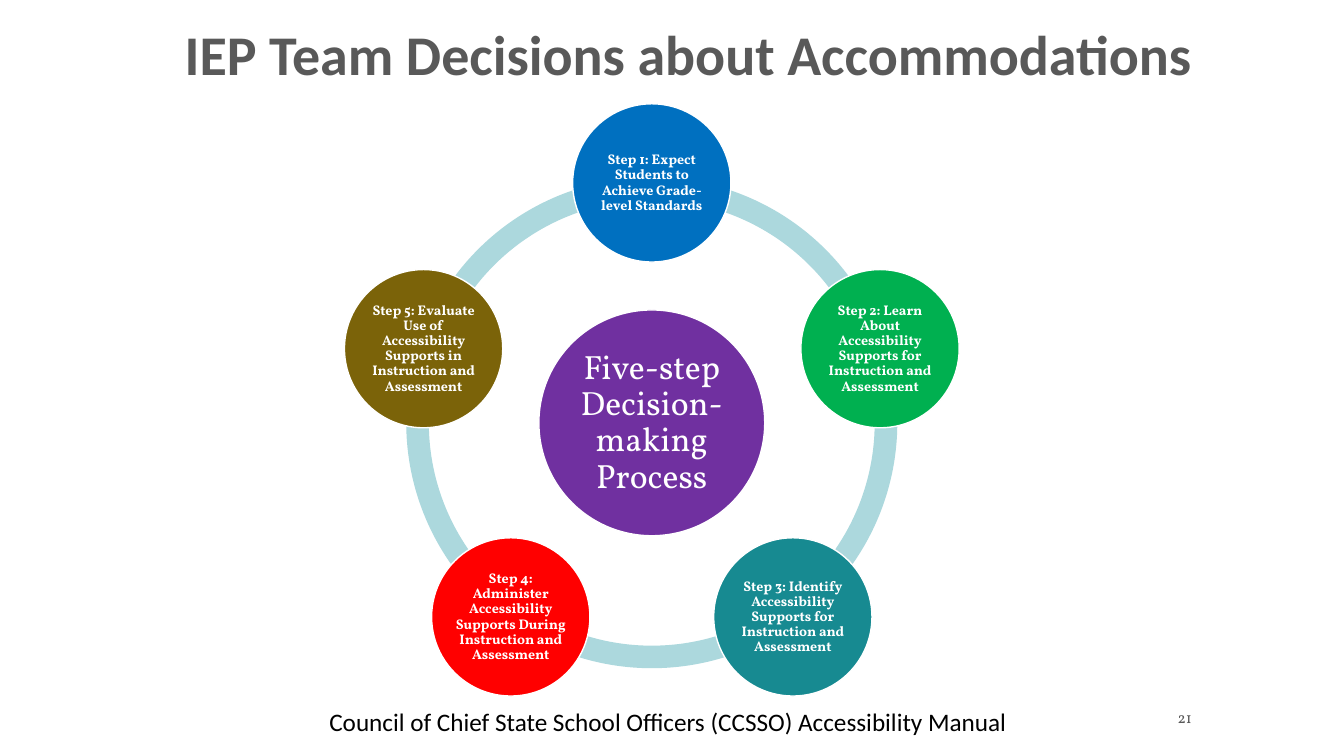
import math

import pptx
import pptx.dml.color
import pptx.enum.shapes
import pptx.enum.text
import pptx.util

Inches = pptx.util.Inches
Pt = pptx.util.Pt
RGBColor = pptx.dml.color.RGBColor
MSO_SHAPE = pptx.enum.shapes.MSO_SHAPE
MSO_ANCHOR = pptx.enum.text.MSO_ANCHOR
PP_ALIGN = pptx.enum.text.PP_ALIGN

WHITE = RGBColor(0xFF, 0xFF, 0xFF)
BLACK = RGBColor(0x00, 0x00, 0x00)
GRAY = RGBColor(0x59, 0x59, 0x59)
RING = RGBColor(0xAC, 0xD8, 0xDD)
PURPLE = RGBColor(0x70, 0x30, 0xA0)
BLUE = RGBColor(0x00, 0x70, 0xC0)
GREEN = RGBColor(0x00, 0xB0, 0x50)
TEAL = RGBColor(0x17, 0x8A, 0x91)
RED = RGBColor(0xFF, 0x00, 0x00)
OLIVE = RGBColor(0x7B, 0x63, 0x09)

HEADING_FONT = "Calibri"
BODY_FONT = "Vollkorn"

# Clockwise from the top
STEPS = [
    ("Step 1: Expect Students to Achieve Grade-level Standards", BLUE),
    ("Step 2: Learn About Accessibility Supports for Instruction and Assessment", GREEN),
    ("Step 3: Identify Accessibility Supports for Instruction and Assessment", TEAL),
    ("Step 4: Administer Accessibility Supports During Instruction and Assessment", RED),
    ("Step 5: Evaluate Use of Accessibility Supports in Instruction and Assessment", OLIVE),
]


def write(frame, text, size, font, color, bold=False, align=PP_ALIGN.CENTER,
          anchor=MSO_ANCHOR.MIDDLE, spacing=0.9):
    frame.word_wrap = True
    frame.auto_size = pptx.enum.text.MSO_AUTO_SIZE.NONE
    frame.vertical_anchor = anchor
    paragraph = frame.paragraphs[0]
    paragraph.alignment = align
    paragraph.line_spacing = spacing
    run = paragraph.add_run()
    run.text = text
    run.font.size = Pt(size)
    run.font.name = font
    run.font.bold = bold
    run.font.color.rgb = color
    return paragraph


def add_title(slide, left, top, width, height):
    title = slide.shapes.title
    title.left, title.top = Inches(left), Inches(top)
    title.width, title.height = Inches(width), Inches(height)
    write(title.text_frame, "IEP Team Decisions about Accommodations", 40,
          HEADING_FONT, GRAY, bold=True, anchor=MSO_ANCHOR.TOP)


def add_circle(slide, center_x, center_y, diameter, fill, text, size, bold, inset):
    circle = slide.shapes.add_shape(
        MSO_SHAPE.OVAL, Inches(center_x - diameter / 2), Inches(center_y - diameter / 2),
        Inches(diameter), Inches(diameter))
    circle.shadow.inherit = False
    circle.fill.solid()
    circle.fill.fore_color.rgb = fill
    circle.line.color.rgb = WHITE
    circle.line.width = Pt(1)
    frame = circle.text_frame
    frame.margin_left = frame.margin_right = Inches(inset)
    frame.margin_top = frame.margin_bottom = Inches(inset)
    write(frame, text, size, BODY_FONT, WHITE, bold)


def add_cycle(slide, left, top, diameter):
    """Ring of steps around a hub; the box is the outer edge of the ring."""
    center_x, center_y = left + diameter / 2, top + diameter / 2
    orbit = 2.38
    turn = 360 / len(STEPS)
    angles = [(270 + turn * index) % 360 for index in range(len(STEPS))]

    # Ring segments, each running from one step to the next
    for angle in angles:
        segment = slide.shapes.add_shape(
            MSO_SHAPE.BLOCK_ARC, Inches(left), Inches(top), Inches(diameter), Inches(diameter))
        segment.shadow.inherit = False
        segment.fill.solid()
        segment.fill.fore_color.rgb = RING
        segment.line.fill.background()
        # Angles are in 60000ths of a degree, adjustments in 100000ths
        segment.adjustments[0] = angle * 0.6
        segment.adjustments[1] = (angle + turn) % 360 * 0.6
        segment.adjustments[2] = 0.046

    # Hub
    add_circle(slide, center_x, center_y, 2.24, PURPLE,
               "Five-step Decision-making Process", 24, False, 0.03)

    # Steps
    for angle, (text, fill) in zip(angles, STEPS):
        radians = math.radians(angle)
        add_circle(slide, center_x + orbit * math.cos(radians),
                   center_y + orbit * math.sin(radians), 1.57, fill, text, 10, True, 0.01)


def add_credit(slide, left, top, width, height):
    credit = slide.shapes.add_textbox(Inches(left), Inches(top), Inches(width), Inches(height))
    credit.text_frame.margin_left = Inches(0.6)
    paragraph = write(credit.text_frame,
                      "Council of Chief State School Officers (CCSSO) Accessibility Manual",
                      18, HEADING_FONT, BLACK, anchor=MSO_ANCHOR.TOP)
    paragraph.space_before = Pt(5)


def add_page_number(slide, left, top, width, height):
    number = slide.shapes.add_textbox(Inches(left), Inches(top), Inches(width), Inches(height))
    write(number.text_frame, "21", 11, BODY_FONT, GRAY, align=PP_ALIGN.RIGHT, spacing=1.0)


def main():
    deck = pptx.Presentation()
    deck.slide_width, deck.slide_height = Inches(13.33), Inches(7.5)
    slide = deck.slides.add_slide(deck.slide_layouts[5])
    add_title(slide, 0.94, 0.22, 11.77, 0.64)
    add_cycle(slide, 4.03, 1.76, 4.87)
    add_credit(slide, 0.53, 6.99, 11.69, 0.37)
    add_page_number(slide, 10.42, 6.97, 1.5, 0.3)
    deck.save("out.pptx")


if __name__ == "__main__":
    main()
